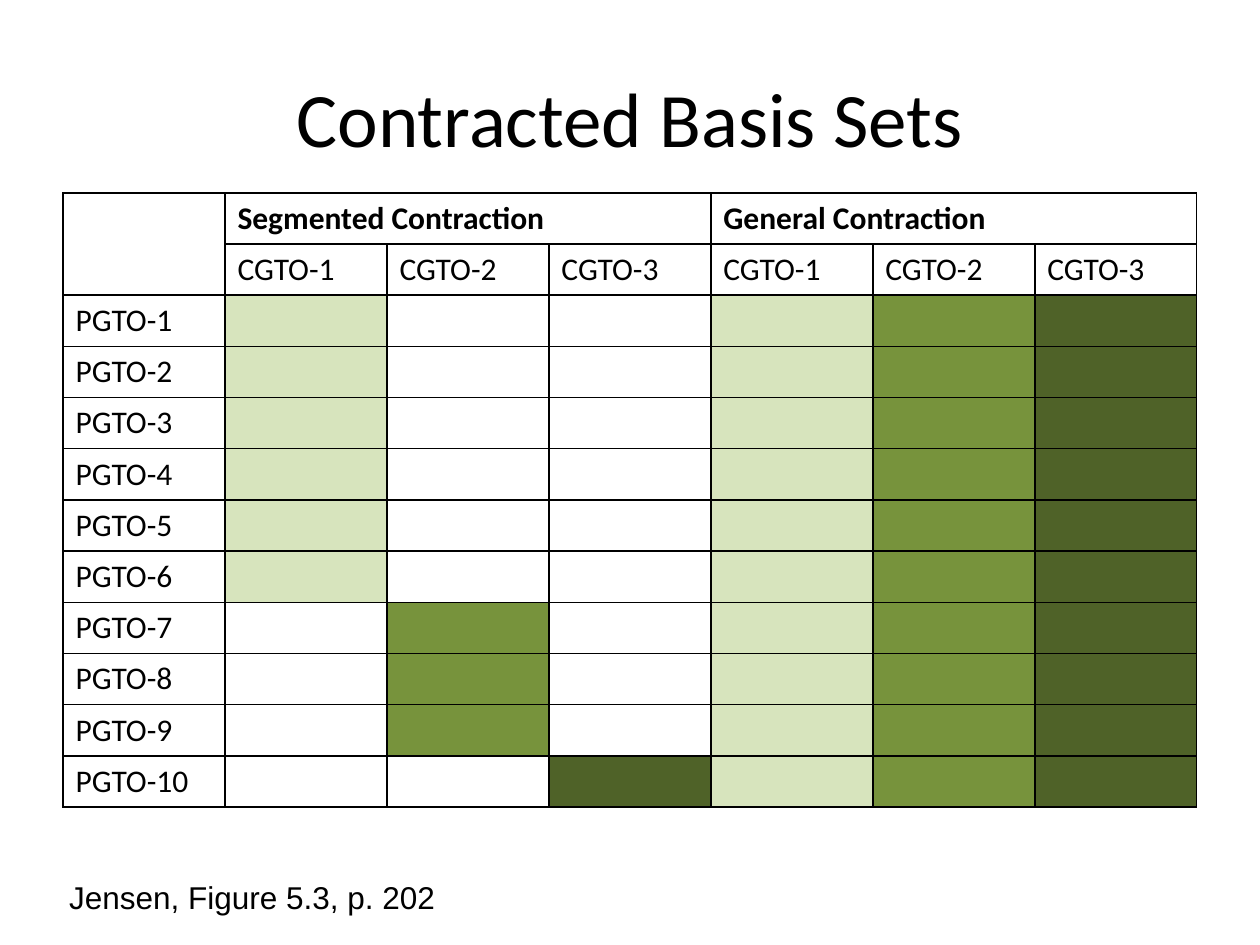
from lxml import etree
from pptx import Presentation
from pptx.dml.color import RGBColor
from pptx.enum import text
from pptx.oxml import ns
from pptx.util import Inches, Pt

COLORS = {
    "black": "000000",
    "white": "FFFFFF",
    "light": "D7E4BD",
    "medium": "77933C",
    "dark": "4F6228",
}
SHADES = ["light", "medium", "dark"]
SEGMENTS = [range(1, 7), range(7, 10), range(10, 11)]  # primitives in each contraction
PRIMITIVES = 10
HEADER_ROWS = 2


def write(frame, content, size=18, font="Calibri", bold=False, align=None):
    paragraph = frame.paragraphs[0]
    paragraph.alignment = align
    run = paragraph.add_run()
    run.text = content
    run.font.size = Pt(size)
    run.font.name = font
    run.font.bold = bold
    run.font.color.rgb = RGBColor.from_string(COLORS["black"])


def style_cell(cell, fill):
    """Draw a thin black border on all four sides, then fill the cell."""
    properties = cell._tc.get_or_add_tcPr()
    for side in ("lnL", "lnR", "lnT", "lnB"):
        line = etree.SubElement(properties, ns.qn(f"a:{side}"), w=str(Pt(1)))
        solid = etree.SubElement(line, ns.qn("a:solidFill"))
        etree.SubElement(solid, ns.qn("a:srgbClr"), val=COLORS["black"])
    cell.fill.solid()
    cell.fill.fore_color.rgb = RGBColor.from_string(COLORS[fill])


presentation = Presentation()
presentation.slide_width = Inches(10)
presentation.slide_height = Inches(7.5)
slide = presentation.slides.add_slide(presentation.slide_layouts[5])

# Title
title = slide.shapes.title
title.left, title.top = Inches(0.5), Inches(0.3)
title.width, title.height = Inches(9), Inches(1.25)
title.text_frame.vertical_anchor = text.MSO_ANCHOR.MIDDLE
write(title.text_frame, "Contracted Basis Sets", size=44, align=text.PP_ALIGN.CENTER)

# Contraction table
row_count = HEADER_ROWS + PRIMITIVES
column_count = 1 + 2 * len(SHADES)
table = slide.shapes.add_table(
    row_count, column_count, Inches(0.5), Inches(1.53), Inches(9), Inches(4.88)
).table
table.first_row = False
table.horz_banding = False

for row in range(row_count):
    primitive = row - HEADER_ROWS + 1
    for column in range(column_count):
        fill = "white"
        if primitive >= 1 and column >= 1:
            scheme, contraction = divmod(column - 1, len(SHADES))
            is_general = scheme == 1
            if is_general or primitive in SEGMENTS[contraction]:
                fill = SHADES[contraction]
        style_cell(table.cell(row, column), fill)

table.cell(0, 0).merge(table.cell(1, 0))
for first, heading in ((1, "Segmented Contraction"), (4, "General Contraction")):
    table.cell(0, first).merge(table.cell(0, first + 2))
    write(table.cell(0, first).text_frame, heading, bold=True)
    for offset in range(len(SHADES)):
        write(table.cell(1, first + offset).text_frame, f"CGTO-{offset + 1}")
for primitive in range(1, PRIMITIVES + 1):
    write(table.cell(HEADER_ROWS + primitive - 1, 0).text_frame, f"PGTO-{primitive}")

# Citation
citation = slide.shapes.add_textbox(Inches(0.45), Inches(6.92), Inches(3.14), Inches(0.4))
citation.text_frame.word_wrap = False
citation.text_frame.auto_size = text.MSO_AUTO_SIZE.SHAPE_TO_FIT_TEXT
write(citation.text_frame, "Jensen, Figure 5.3, p. 202", font="Arial")

presentation.save("out.pptx")
